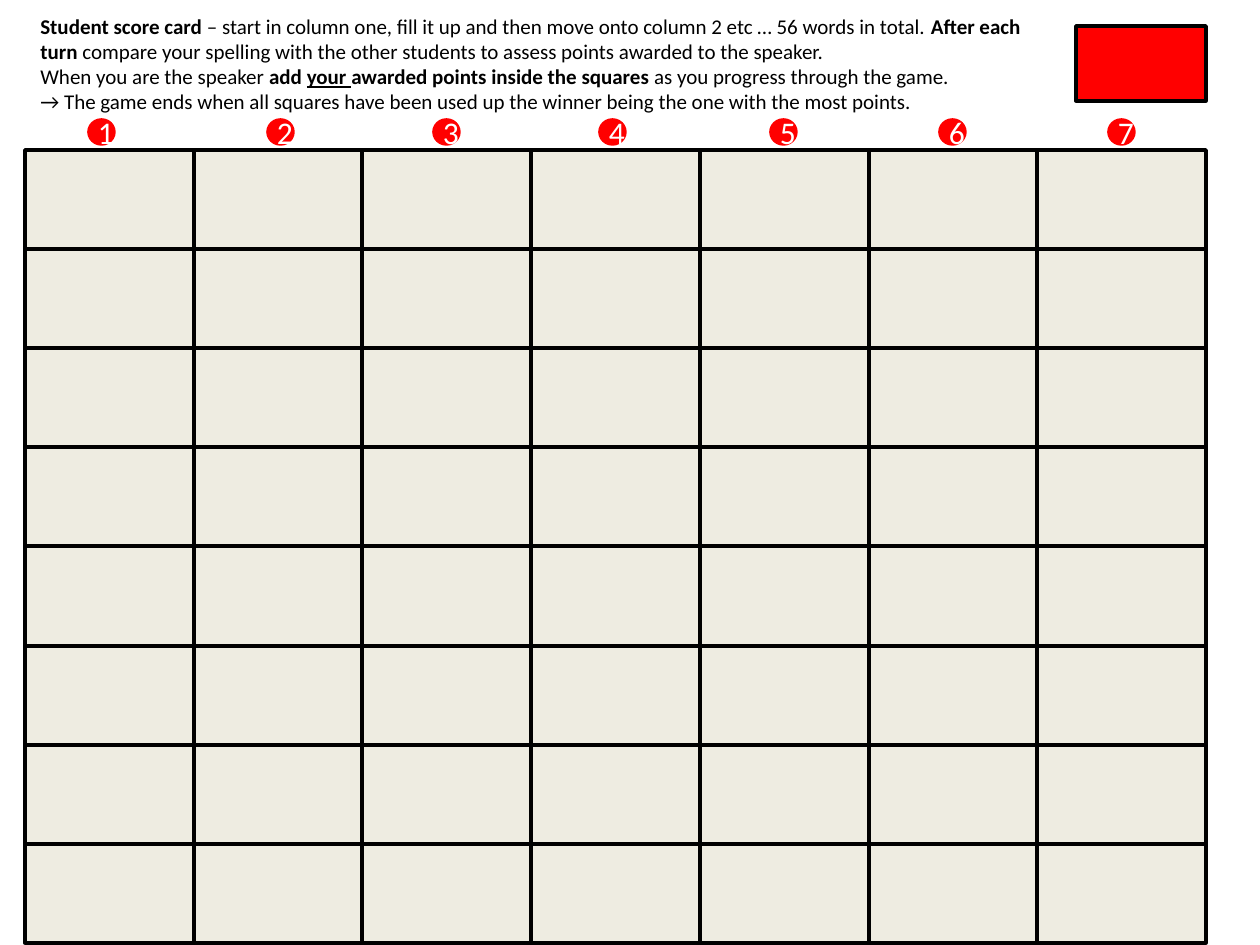
import pptx
import pptx.dml.color
import pptx.enum.shapes
import pptx.enum.text
import pptx.util

PX = 914400 / 126
BLACK = pptx.dml.color.RGBColor(0x00, 0x00, 0x00)
WHITE = pptx.dml.color.RGBColor(0xFF, 0xFF, 0xFF)
RED = pptx.dml.color.RGBColor(0xFF, 0x00, 0x00)
CREAM = pptx.dml.color.RGBColor(0xEE, 0xEC, 0xE1)
RECTANGLE = pptx.enum.shapes.MSO_SHAPE.RECTANGLE
OVAL = pptx.enum.shapes.MSO_SHAPE.OVAL

COLUMNS, ROWS = 7, 8
GRID_LEFT, GRID_TOP, GRID_WIDTH, GRID_HEIGHT = 25, 150, 1181, 793
MARKER_LEFTS = (89, 268, 434, 600, 771, 940, 1109)

BOLD = {"bold": True}
INSTRUCTIONS = (
    (
        ("Student score card ", BOLD),
        ("– start in column one, fill it up and then move onto column 2 etc … 56 words in total. ", {}),
        ("After each turn ", BOLD),
        ("compare your spelling with the other students to assess points awarded to the speaker.", {}),
    ),
    (
        ("When you are the speaker ", {}),
        ("add ", BOLD),
        ("your ", {"bold": True, "underline": True}),
        ("awarded points inside the squares ", BOLD),
        ("as you progress through the game.", {}),
    ),
    (
        ("→ The game ends when all squares have been used up the winner being the one with the most points.", {}),
    ),
)


def px(length):
    """Turn a length in px into EMU."""
    return pptx.util.Emu(round(length * PX))


def add_span(para, text, color, **formats):
    """Add a run of text with the given font formats."""
    span = para.add_run()
    span.text = text
    span.font.color.rgb = color
    for name, value in formats.items():
        setattr(span.font, name, value)


def add_box(page, kind, frame, fill, line):
    """Add a filled, outlined shape and return it."""
    box = page.shapes.add_shape(kind, *map(px, frame))
    box.shadow.inherit = False
    box.fill.solid()
    box.fill.fore_color.rgb = fill
    box.line.color.rgb = line
    box.line.width = pptx.util.Pt(2)
    return box


def add_marker(page, left, text):
    """Add a round column marker with its number."""
    box = add_box(page, OVAL, (left, 120, 25, 24), RED, RED)
    box.text_frame.vertical_anchor = pptx.enum.text.MSO_ANCHOR.MIDDLE
    para = box.text_frame.paragraphs[0]
    para.alignment = pptx.enum.text.PP_ALIGN.CENTER
    add_span(para, text, WHITE, name="Calibri", size=pptx.util.Pt(18))


def add_score_grid(page):
    """Add the empty score squares, bottom row first."""
    across = [round(GRID_LEFT + GRID_WIDTH * step / COLUMNS) for step in range(COLUMNS + 1)]
    down = [round(GRID_TOP + GRID_HEIGHT * step / ROWS) for step in range(ROWS + 1)]
    for row in reversed(range(ROWS)):
        for column in range(COLUMNS):
            left, top = across[column], down[row]
            frame = (left, top, across[column + 1] - left, down[row + 1] - top)
            add_box(page, RECTANGLE, frame, CREAM, BLACK)


def add_instructions(page):
    """Add the rules of the game above the grid."""
    box = page.shapes.add_textbox(*map(px, (28, 7, 1032, 115)))
    frame = box.text_frame
    frame.word_wrap = True
    frame.auto_size = pptx.enum.text.MSO_AUTO_SIZE.SHAPE_TO_FIT_TEXT
    for index, spans in enumerate(INSTRUCTIONS):
        para = frame.add_paragraph() if index else frame.paragraphs[0]
        for text, formats in spans:
            add_span(para, text, BLACK, name="Calibri", size=pptx.util.Pt(12), **formats)


def main():
    """Build the score card and save it."""
    deck = pptx.Presentation()
    deck.slide_width, deck.slide_height = px(1260), px(945)
    page = deck.slides.add_slide(deck.slide_layouts[6])
    add_score_grid(page)
    add_instructions(page)
    add_box(page, RECTANGLE, (1076, 26, 130, 75), RED, BLACK)
    for number, left in enumerate(MARKER_LEFTS, start=1):
        add_marker(page, left, str(number))
    deck.save("out.pptx")


if __name__ == "__main__":
    main()
